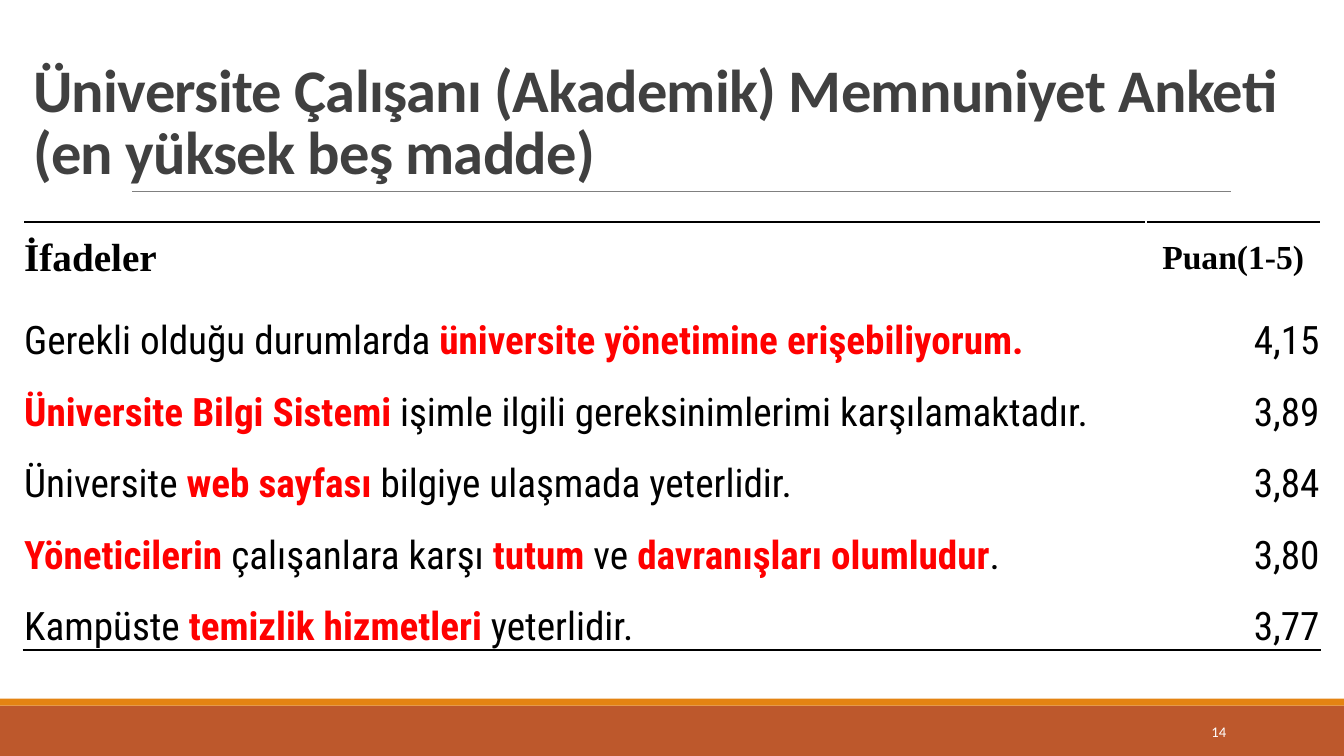
from dataclasses import dataclass

from lxml.etree import SubElement
from pptx import Presentation
from pptx.dml.color import RGBColor
from pptx.enum.shapes import MSO_CONNECTOR, MSO_SHAPE
from pptx.enum.text import MSO_ANCHOR, PP_ALIGN
from pptx.oxml import parse_xml
from pptx.oxml.ns import nsdecls, qn
from pptx.util import Pt


@dataclass(frozen=True)
class Theme:
    rust: str = "BD582C"
    orange: str = "E48312"
    rule: str = "808080"
    white: str = "FFFFFF"
    black: str = "000000"
    red: str = "FF0000"
    gray: str = "404040"
    sans: str = "Calibri"
    serif: str = "Times New Roman"
    narrow: str = "Roboto Condensed"
    title: float = 43.2
    body: float = 28
    score: float = 24
    number: float = 10.5


theme = Theme()


def write(frame, text, size, font, color, bold=False, align=PP_ALIGN.LEFT,
          anchor=MSO_ANCHOR.MIDDLE, space=None, track=None):
    """Write one paragraph; parts between asterisks are bold and red."""
    frame.word_wrap = True
    frame.vertical_anchor = anchor
    para = frame.paragraphs[0]
    para.alignment = align
    para.line_spacing = space
    for row, line in enumerate(text.split("\n")):
        if row:
            para.add_line_break()
        for i, part in enumerate(line.split("*")):
            if not part:
                continue
            run = para.add_run()
            run.text = part
            run.font.size = Pt(size)
            run.font.name = font
            run.font.bold = bold or i % 2 == 1
            run.font.color.rgb = RGBColor.from_string(theme.red if i % 2 else color)
            if track:
                run.font._element.set("spc", str(track))


def edge(cell, side):
    """Draw a black 2 pt border on side T or B of a cell."""
    line = parse_xml(f'<a:ln{side} {nsdecls("a")} w="{Pt(2)}"><a:solidFill>'
                     f'<a:srgbClr val="{theme.black}"/></a:solidFill></a:ln{side}>')
    cell._tc.get_or_add_tcPr().insert(0, line)


deck = Presentation()
deck.slide_width, deck.slide_height = Pt(960), Pt(540)
slide = deck.slides.add_slide(deck.slide_layouts[6])
shapes = slide.shapes

# Footer bands
for top, high, color in [(504, 36, theme.rust), (499, 5, theme.orange)]:
    band = shapes.add_shape(MSO_SHAPE.RECTANGLE, 0, Pt(top), Pt(960), Pt(high))
    band.shadow.inherit = False
    band.fill.solid()
    band.fill.fore_color.rgb = RGBColor.from_string(color)
    band.line.fill.background()

# Rule under the title
rule = shapes.add_connector(MSO_CONNECTOR.STRAIGHT, Pt(94.4), Pt(136.6), Pt(879), Pt(136.6))
rule.line.width = Pt(0.5)
rule.line.color.rgb = RGBColor.from_string(theme.rule)
SubElement(rule._element.spPr, qn("a:effectLst"))

number = shapes.add_textbox(Pt(780), Pt(508.3), Pt(103), Pt(28.8))
write(number.text_frame, "14", theme.number, theme.sans, theme.white, align=PP_ALIGN.RIGHT)

# Survey table
items = [
    ("Gerekli olduğu durumlarda *üniversite yönetimine erişebiliyorum.*", "4,15"),
    ("*Üniversite Bilgi Sistemi *işimle ilgili gereksinimlerimi karşılamaktadır.", "3,89"),
    ("Üniversite *web sayfası* bilgiye ulaşmada yeterlidir.", "3,84"),
    ("*Yöneticilerin* çalışanlara karşı *tutum* ve *davranışları olumludur*.", "3,80"),
    ("Kampüste *temizlik hizmetleri* yeterlidir.", "3,77"),
]
rows = [("İfadeler", "Puan(1-5)")] + items
table = shapes.add_table(len(rows), 2, Pt(16.6), Pt(158.4), Pt(926.6), Pt(306)).table
table.first_row = table.horz_banding = False
table.columns[0].width, table.columns[1].width = Pt(802), Pt(124.6)

for r, row in enumerate(rows):
    table.rows[r].height = Pt(51)
    for c, text in enumerate(row):
        cell = table.cell(r, c)
        cell.fill.solid()
        cell.fill.fore_color.rgb = RGBColor.from_string(theme.white)
        cell.margin_left = cell.margin_top = cell.margin_right = Pt(0.7)
        cell.margin_bottom = 0
        if r == 0:
            look = dict(size=theme.score if c else theme.body, font=theme.serif, bold=True,
                        align=PP_ALIGN.CENTER if c else PP_ALIGN.LEFT)
            edge(cell, "T")
        else:
            look = dict(size=theme.body, font=theme.narrow,
                        align=PP_ALIGN.RIGHT if c else PP_ALIGN.LEFT)
        write(cell.text_frame, text, color=theme.black, **look)
        cell.vertical_anchor = MSO_ANCHOR.BOTTOM if r else MSO_ANCHOR.MIDDLE
        if r == len(items):
            edge(cell, "B")

title = shapes.add_textbox(Pt(16.6), Pt(22.3), Pt(926.6), Pt(114.5))
write(title.text_frame, "Üniversite Çalışanı (Akademik) Memnuniyet Anketi\n(en yüksek beş madde)",
      theme.title, theme.sans, theme.gray, bold=True, anchor=MSO_ANCHOR.BOTTOM,
      space=0.85, track=-50)

deck.save("out.pptx")
